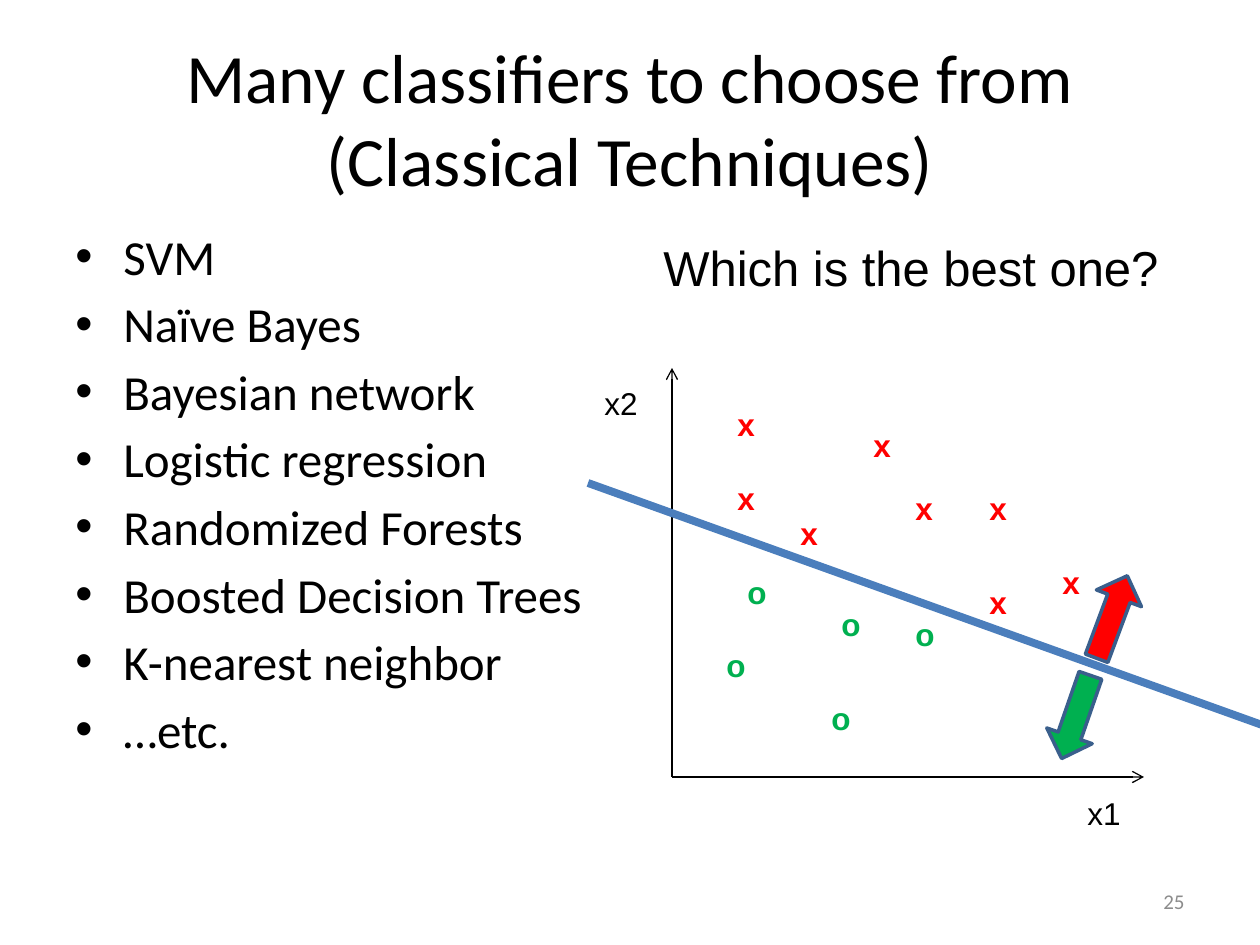
"""Build the slide on choosing among classical classifiers."""
import pptx
import pptx.dml.color
import pptx.enum.shapes
import pptx.enum.text
import pptx.util
from dataclasses import dataclass
from lxml import etree


@dataclass(frozen=True)
class Theme:
    heading_font: str = "Calibri"
    label_font: str = "Arial"
    ink: str = "000000"
    positive: str = "FF0000"
    negative: str = "00B050"
    boundary: str = "4B7EBC"
    arrow_edge: str = "3A5F8C"
    muted: str = "8C8C8C"
    title_size: float = 39.6
    body_size: int = 28
    label_size: int = 18
    number_size: int = 12
    item_gap: int = 5


THEME = Theme()
PX = pptx.util.Inches(1) / 126
ALIGN = pptx.enum.text.PP_ALIGN
MIDDLE = pptx.enum.text.MSO_ANCHOR.MIDDLE

TITLE = "Many classifiers to choose from (Classical Techniques)"
TITLE_BOX = (63, 38, 1134, 158)
CLASSIFIERS = [
    "SVM", "Naïve Bayes", "Bayesian network", "Logistic regression",
    "Randomized Forests", "Boosted Decision Trees", "K-nearest neighbor", "…etc.",
]
CLASSIFIERS_BOX = (63, 220, 1134, 624)
ITEM_INDENT = 48
QUESTION = ("Which is the best one?", (651, 231, 527, 72))
MARKER_HEIGHT = 50
SAMPLES = [
    ("x", THEME.positive, 43, [(903, 483), (977, 483), (977, 577), (1050, 557),
                               (725, 399), (725, 473), (861, 420), (788, 508)]),
    ("o", THEME.negative, 45, [(903, 609), (714, 640), (735, 567), (819, 693), (829, 599)]),
]
AXIS_LABELS = [("x2", (592, 378, 59, 50)), ("x1", (1075, 788, 59, 50))]
ORIGIN = (672, 777)
AXIS_ENDS = [(672, 368), (1144, 777)]
BOUNDARY = ((588, 483), (1407, 777))
SIDE_ARROWS = [
    ((1068, 593, 88, 48), 290.4, THEME.positive),
    ((1032, 693, 88, 48), 109.1, THEME.negative),
]
SLIDE_NUMBER = ("25", (903, 876, 294, 50))


def emu(*lengths):
    return [round(length * PX) for length in lengths]


def rgb(code):
    return pptx.dml.color.RGBColor.from_string(code)


def add_run(paragraph, text, size, font, color=THEME.ink, bold=False):
    run = paragraph.add_run()
    run.text = text
    run.font.size = pptx.util.Pt(size)
    run.font.name = font
    run.font.bold = bold
    run.font.color.rgb = rgb(color)


def add_label(slide, box, text, size, font=THEME.label_font, color=THEME.ink, bold=False):
    frame = slide.shapes.add_textbox(*emu(*box)).text_frame
    frame.word_wrap = False
    add_run(frame.paragraphs[0], text, size, font, color, bold)
    return frame


def add_line(slide, start, end, color, width, arrow=False):
    line = slide.shapes.add_connector(
        pptx.enum.shapes.MSO_CONNECTOR.STRAIGHT, *emu(*start, *end))
    line.line.color.rgb = rgb(color)
    line.line.width = pptx.util.Pt(width)
    if arrow:
        tail = etree.SubElement(line.line._get_or_add_ln(), pptx.oxml.ns.qn("a:tailEnd"))
        tail.set("type", "arrow")
    etree.SubElement(line._element.spPr, pptx.oxml.ns.qn("a:effectLst"))


def add_title(slide):
    title = slide.shapes.title
    title.left, title.top, title.width, title.height = emu(*TITLE_BOX)
    title.text_frame.vertical_anchor = MIDDLE
    paragraph = title.text_frame.paragraphs[0]
    paragraph.alignment = ALIGN.CENTER
    add_run(paragraph, TITLE, THEME.title_size, THEME.heading_font)


def add_classifiers(slide):
    frame = slide.shapes.add_textbox(*emu(*CLASSIFIERS_BOX)).text_frame
    frame.word_wrap = True
    for index, name in enumerate(CLASSIFIERS):
        paragraph = frame.add_paragraph() if index else frame.paragraphs[0]
        if index:
            paragraph.space_before = pptx.util.Pt(THEME.item_gap)
        properties = paragraph._p.get_or_add_pPr()
        indent = emu(ITEM_INDENT)[0]
        properties.set("marL", str(indent))
        properties.set("indent", str(-indent))
        etree.SubElement(properties, pptx.oxml.ns.qn("a:buFont")).set("typeface", THEME.label_font)
        etree.SubElement(properties, pptx.oxml.ns.qn("a:buChar")).set("char", "•")
        add_run(paragraph, name, THEME.body_size, THEME.heading_font)


def add_plot(slide):
    for mark, color, width, corners in SAMPLES:
        for corner in corners:
            add_label(slide, (*corner, width, MARKER_HEIGHT), mark,
                      THEME.label_size, color=color, bold=True)
    for end in AXIS_ENDS:
        add_line(slide, ORIGIN, end, THEME.ink, 0.75, arrow=True)
    for text, box in AXIS_LABELS:
        add_label(slide, box, text, THEME.label_size)
    add_line(slide, *BOUNDARY, THEME.boundary, 4.5)
    for box, angle, color in SIDE_ARROWS:
        arrow = slide.shapes.add_shape(
            pptx.enum.shapes.MSO_SHAPE.RIGHT_ARROW, *emu(*box))
        arrow.rotation = angle
        arrow.shadow.inherit = False
        arrow.fill.solid()
        arrow.fill.fore_color.rgb = rgb(color)
        arrow.line.color.rgb = rgb(THEME.arrow_edge)
        arrow.line.width = pptx.util.Pt(2)


def add_slide_number(slide):
    text, box = SLIDE_NUMBER
    frame = add_label(slide, box, text, THEME.number_size, THEME.heading_font, THEME.muted)
    frame.word_wrap = True
    frame.vertical_anchor = MIDDLE
    frame.paragraphs[0].alignment = ALIGN.RIGHT


def main():
    deck = pptx.Presentation()
    deck.slide_width, deck.slide_height = emu(1260, 945)
    slide = deck.slides.add_slide(deck.slide_layouts.get_by_name("Title Only"))
    add_title(slide)
    add_classifiers(slide)
    question, box = QUESTION
    add_label(slide, box, question, THEME.body_size)
    add_plot(slide)
    add_slide_number(slide)
    deck.save("out.pptx")


if __name__ == "__main__":
    main()
